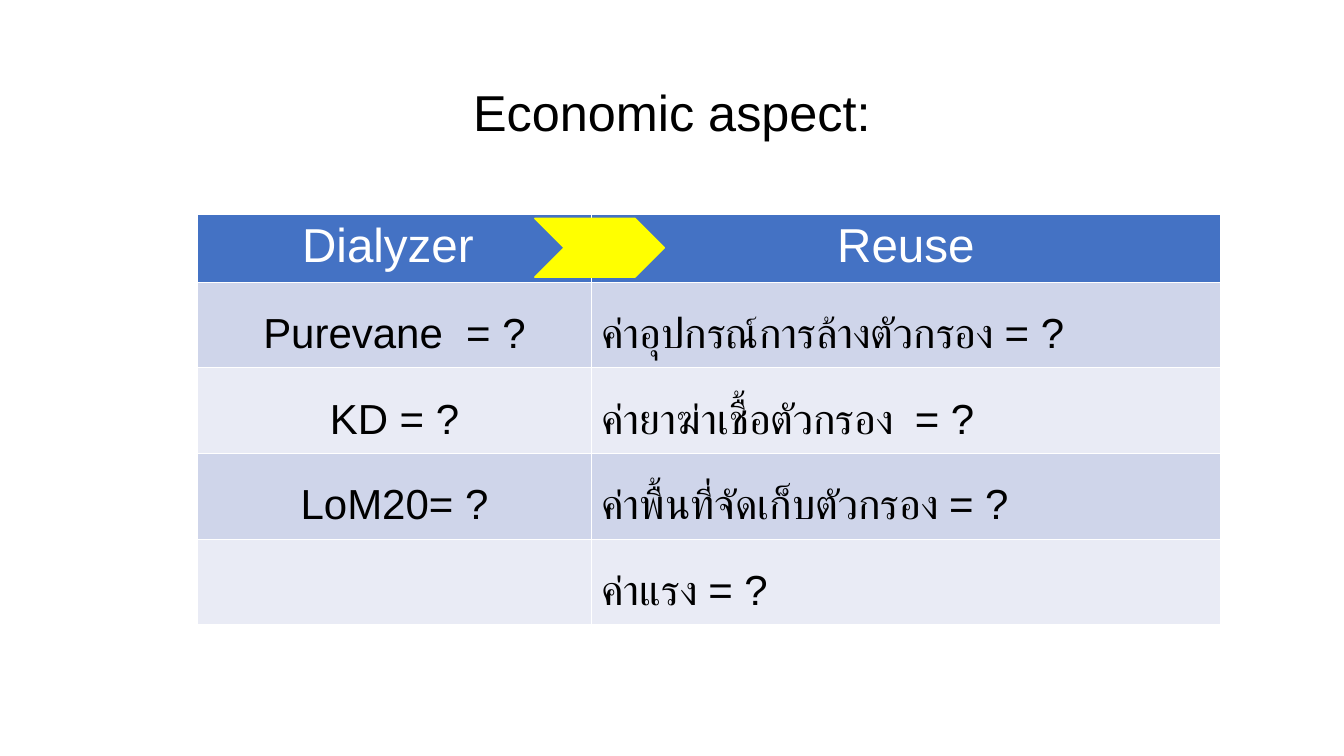
from pptx import Presentation
from pptx.dml.color import RGBColor
from pptx.enum.shapes import MSO_SHAPE
from pptx.enum.text import PP_ALIGN
from pptx.util import Pt

theme = {
    "font": "Arial",
    "black": RGBColor(0, 0, 0),
    "white": RGBColor(255, 255, 255),
    "blue": RGBColor(0x44, 0x72, 0xC4),
    "bands": [RGBColor(0xCF, 0xD5, 0xEA), RGBColor(0xE9, 0xEB, 0xF5)],
    "yellow": RGBColor(255, 255, 0),
    "title": 36,
    "head": 34,
    "body": 30,
}


def put(frame, text, size, color=theme["black"], align=PP_ALIGN.CENTER, space=1.5):
    line = frame.paragraphs[0]
    line.alignment = align
    line.line_spacing = space
    run = line.add_run()
    run.text = text
    run.font.name = theme["font"]
    run.font.size = Pt(size)
    run.font.bold = False
    run.font.color.rgb = color


deck = Presentation()
deck.slide_width = Pt(960)
deck.slide_height = Pt(540)
slide = deck.slides.add_slide(deck.slide_layouts[6])

title = slide.shapes.add_textbox(Pt(0), Pt(33), Pt(960), Pt(67))
title.text_frame.word_wrap = True
put(title.text_frame, "Economic aspect:", theme["title"])

heads = ["Dialyzer ", "Reuse"]
costs = [
    ("Purevane  = ?", "ค่าอุปกรณ์การล้างตัวกรอง = ?"),
    ("KD = ?", "ค่ายาฆ่าเชื้อตัวกรอง  = ?"),
    ("LoM20= ?", "ค่าพื้นที่จัดเก็บตัวกรอง = ?"),
    ("", "ค่าแรง = ?"),
]
sides = [PP_ALIGN.CENTER, PP_ALIGN.LEFT]

table = slide.shapes.add_table(
    len(costs) + 1, len(heads), Pt(141.25), Pt(153.5), Pt(730.5), Pt(291.5)
).table
for col, width in zip(table.columns, [281.25, 449.25]):
    col.width = Pt(width)

table.rows[0].height = Pt(47.5)
for cell, text in zip(table.rows[0].cells, heads):
    cell.fill.solid()
    cell.fill.fore_color.rgb = theme["blue"]
    put(cell.text_frame, text, theme["head"], color=theme["white"], space=1.0)

for i, pair in enumerate(costs):
    row = table.rows[i + 1]
    row.height = Pt(61)
    for cell, text, side in zip(row.cells, pair, sides):
        cell.fill.solid()
        cell.fill.fore_color.rgb = theme["bands"][i % 2]
        if text:
            put(cell.text_frame, text, theme["body"], align=side)

arrow = slide.shapes.add_shape(
    MSO_SHAPE.CHEVRON, Pt(382), Pt(156), Pt(92.5), Pt(42)
)
arrow.shadow.inherit = False
arrow.fill.solid()
arrow.fill.fore_color.rgb = theme["yellow"]
arrow.line.color.rgb = theme["yellow"]
arrow.line.width = Pt(1)

deck.save("out.pptx")
